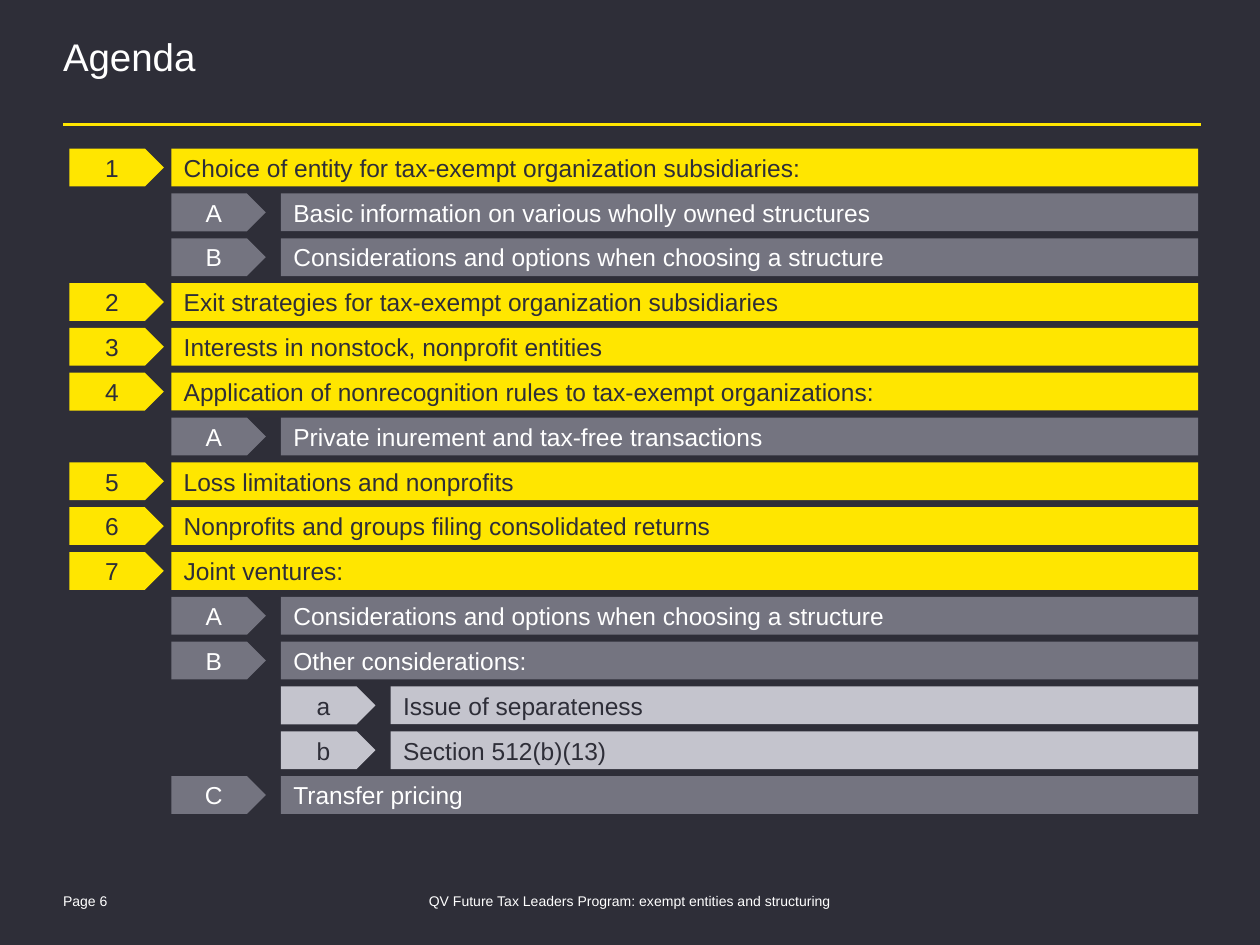
import pptx
import pptx.util
import pptx.dml.color
import pptx.enum.shapes
import pptx.enum.text
import pptx.oxml
import pptx.oxml.ns
from pptx.util import Inches

COLORS = {"dark": "2E2E38", "yellow": "FFE600", "gray": "747480", "silver": "C4C4CD", "white": "FFFFFF"}

TITLE = "Agenda"
FOOTERS = [
    ("Page 6", 0.5, 1.31, "LEFT"),
    ("QV Future Tax Leaders Program: exempt entities and structuring", 2.79, 4.42, "CENTER"),
]
AGENDA = [
    (0, "1", "Choice of entity for tax-exempt organization subsidiaries:"),
    (1, "A", "Basic information on various wholly owned structures"),
    (1, "B", "Considerations and options when choosing a structure"),
    (0, "2", "Exit strategies for tax-exempt organization subsidiaries"),
    (0, "3", "Interests in nonstock, nonprofit entities"),
    (0, "4", "Application of nonrecognition rules to tax-exempt organizations:"),
    (1, "A", "Private inurement and tax-free transactions"),
    (0, "5", "Loss limitations and nonprofits"),
    (0, "6", "Nonprofits and groups filing consolidated returns"),
    (0, "7", "Joint ventures:"),
    (1, "A", "Considerations and options when choosing a structure"),
    (1, "B", "Other considerations:"),
    (2, "a", "Issue of separateness"),
    (2, "b", "Section 512(b)(13)"),
    (1, "C", "Transfer pricing"),
]
LEVELS = [
    {"tag": 0.55, "bar": 1.36, "fill": "yellow", "text": "dark"},
    {"tag": 1.36, "bar": 2.23, "fill": "gray", "text": "white"},
    {"tag": 2.23, "bar": 3.1, "fill": "silver", "text": "dark"},
]
FIRST_TOP, LAST_TOP = 1.18, 6.16
ROW_HEIGHT, TAG_WIDTH, BAR_RIGHT = 0.3, 0.75, 9.51

Shape = pptx.enum.shapes.MSO_SHAPE
Align = pptx.enum.text.PP_ALIGN
Anchor = pptx.enum.text.MSO_ANCHOR


def rgb(name):
    return pptx.dml.color.RGBColor.from_string(COLORS[name])


def set_all(target, values):
    for name, value in values.items():
        setattr(target, name, value)


def write(shape, text, size, color, frame_format, paragraph_format):
    set_all(shape.text_frame, {"auto_size": pptx.enum.text.MSO_AUTO_SIZE.NONE, **frame_format})
    paragraph = shape.text_frame.paragraphs[0]
    paragraph.text = text
    set_all(paragraph, paragraph_format)
    set_all(paragraph.font, {"name": "Arial", "size": pptx.util.Pt(size)})
    paragraph.font.color.rgb = rgb(color)


def margins(left, top, right, bottom):
    sides = ("left", "top", "right", "bottom")
    return {f"margin_{side}": Inches(gap) for side, gap in zip(sides, (left, top, right, bottom))}


def add_block(slide, kind, left, top, width, level, text, wrap, align):
    shape = slide.shapes.add_shape(kind, Inches(left), Inches(top), Inches(width), Inches(ROW_HEIGHT))
    shape.shadow.inherit = False
    shape.fill.solid()
    shape.fill.fore_color.rgb = rgb(level["fill"])
    shape.line.fill.background()
    frame_format = {"word_wrap": wrap, "vertical_anchor": Anchor.MIDDLE, **margins(0.1, 0.05, 0.1, 0.05)}
    write(shape, text, 14, level["text"], frame_format, {"alignment": align})


def add_title(slide):
    title = slide.shapes.title
    set_all(title, {"left": Inches(0.5), "top": Inches(0.32), "width": Inches(9), "height": Inches(0.65)})
    frame_format = {"word_wrap": True, "vertical_anchor": Anchor.TOP, **margins(0, 0, 0, 0)}
    write(title, TITLE, 22, "white", frame_format, {"alignment": Align.LEFT, "line_spacing": 0.85})


def add_rule(slide):
    rule = slide.shapes.add_connector(
        pptx.enum.shapes.MSO_CONNECTOR.STRAIGHT, Inches(0.5), Inches(0.99), Inches(9.53), Inches(0.99))
    rule.line.color.rgb = rgb("yellow")
    rule.line.width = pptx.util.Pt(1.5)
    properties = rule._element.find(pptx.oxml.ns.qn("p:spPr"))
    properties.append(pptx.oxml.parse_xml(f"<a:effectLst {pptx.oxml.ns.nsdecls('a')}/>"))


def add_footers(slide):
    for text, left, width, align in FOOTERS:
        box = slide.shapes.add_textbox(Inches(left), Inches(7.06), Inches(width), Inches(0.15))
        write(box, text, 8, "white", {"word_wrap": True, **margins(0, 0.04, 0, 0)},
              {"alignment": Align[align], "line_spacing": 0.85})


def add_agenda(slide):
    pitch = (LAST_TOP - FIRST_TOP) / (len(AGENDA) - 1)
    for row, (depth, tag, topic) in enumerate(AGENDA):
        level = LEVELS[depth]
        top = FIRST_TOP + row * pitch
        add_block(slide, Shape.PENTAGON, level["tag"], top, TAG_WIDTH, level, tag, True, Align.CENTER)
        add_block(slide, Shape.RECTANGLE, level["bar"], top, BAR_RIGHT - level["bar"], level, topic,
                  False, Align.LEFT)


def main():
    presentation = pptx.Presentation()
    set_all(presentation, {"slide_width": Inches(10), "slide_height": Inches(7.5)})
    slide = presentation.slides.add_slide(presentation.slide_layouts[5])
    slide.background.fill.solid()
    slide.background.fill.fore_color.rgb = rgb("dark")
    add_title(slide)
    add_rule(slide)
    add_agenda(slide)
    add_footers(slide)
    presentation.save("out.pptx")


if __name__ == "__main__":
    main()
